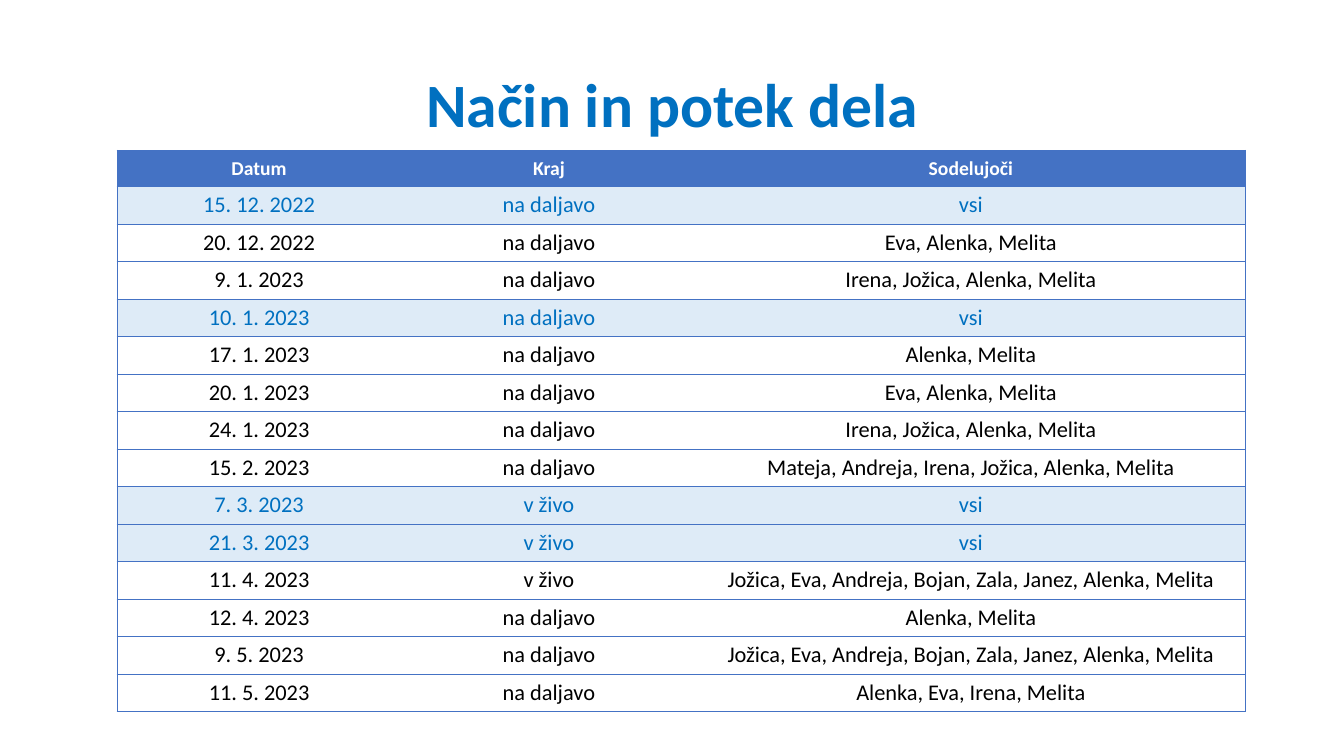
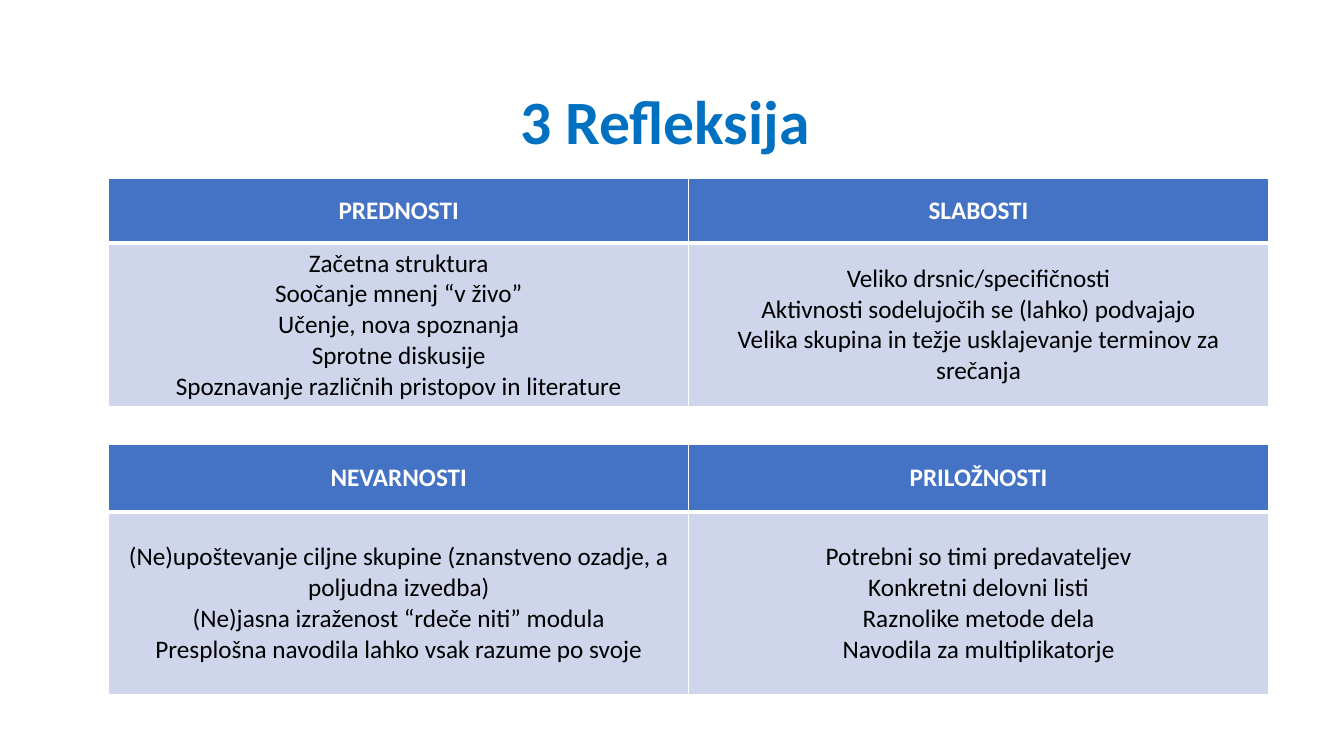
from lxml import etree
from pptx import Presentation
from pptx.dml.color import RGBColor
from pptx.enum.text import MSO_ANCHOR, MSO_AUTO_SIZE, PP_ALIGN
from pptx.oxml.ns import qn
from pptx.util import Inches, Pt

FONT = "Calibri"
TITLE_BLUE = RGBColor(0x00, 0x70, 0xC0)
HEADER_BLUE = RGBColor(0x44, 0x72, 0xC4)
PALE_BLUE = RGBColor(0xDE, 0xEB, 0xF7)
BODY_FILL = RGBColor(0xCF, 0xD5, 0xEA)
WHITE = RGBColor(0xFF, 0xFF, 0xFF)
BLACK = RGBColor(0x00, 0x00, 0x00)

TITLE_ONLY = 5
EVERYONE = "vsi"

MEETINGS = [
    ("15. 12. 2022", "na daljavo", EVERYONE),
    ("20. 12. 2022", "na daljavo", "Eva, Alenka, Melita"),
    ("9. 1. 2023", "na daljavo", "Irena, Jožica, Alenka, Melita"),
    ("10. 1. 2023", "na daljavo", EVERYONE),
    ("17. 1. 2023", "na daljavo", "Alenka, Melita"),
    ("20. 1. 2023", "na daljavo", "Eva, Alenka, Melita"),
    ("24. 1. 2023", "na daljavo", "Irena, Jožica, Alenka, Melita"),
    ("15. 2. 2023", "na daljavo", "Mateja, Andreja, Irena, Jožica, Alenka, Melita"),
    ("7. 3. 2023", "v živo", EVERYONE),
    ("21. 3. 2023", "v živo", EVERYONE),
    ("11. 4. 2023", "v živo", "Jožica, Eva, Andreja, Bojan, Zala, Janez, Alenka, Melita"),
    ("12. 4. 2023", "na daljavo", "Alenka, Melita"),
    ("9. 5. 2023", "na daljavo", "Jožica, Eva, Andreja, Bojan, Zala, Janez, Alenka, Melita"),
    ("11. 5. 2023", "na daljavo", "Alenka, Eva, Irena, Melita"),
]

STRENGTHS = """Začetna struktura
Soočanje mnenj “v živo”
Učenje, nova spoznanja
Sprotne diskusije
Spoznavanje različnih pristopov in literature"""
WEAKNESSES = """Veliko drsnic/specifičnosti
Aktivnosti sodelujočih se (lahko) podvajajo
Velika skupina in težje usklajevanje terminov za srečanja"""
THREATS = """(Ne)upoštevanje ciljne skupine (znanstveno ozadje, a poljudna izvedba)
(Ne)jasna izraženost “rdeče niti” modula
Presplošna navodila lahko vsak razume po svoje"""
OPPORTUNITIES = """Potrebni so timi predavateljev
Konkretni delovni listi
Raznolike metode dela
Navodila za multiplikatorje"""


def add_titled_slide(prs, title, left, top, width, height, align):
    s = prs.slides.add_slide(prs.slide_layouts[TITLE_ONLY])
    sp = s.shapes.title
    sp.left, sp.top, sp.width, sp.height = map(Inches, (left, top, width, height))
    tf = sp.text_frame
    tf.text = title
    tf.auto_size = MSO_AUTO_SIZE.NONE
    tf.vertical_anchor = MSO_ANCHOR.MIDDLE
    p = tf.paragraphs[0]
    p.alignment = align
    p.line_spacing = 0.9
    style_font(p.font, 44, TITLE_BLUE, True)
    return s


def style_font(font, size, color, bold):
    font.name, font.size, font.bold = FONT, Pt(size), bold
    font.color.rgb = color


def set_borders(cell, color, **widths):
    """Draw the sides L, R, T, B with the given point widths; others stay empty."""
    tc_pr = cell._tc.get_or_add_tcPr()
    for side in "LRTB":
        width = widths.get(side, 0)
        ln = etree.SubElement(tc_pr, qn(f"a:ln{side}"), w=str(Pt(width)))
        if width:
            fill = etree.SubElement(ln, qn("a:solidFill"))
            etree.SubElement(fill, qn("a:srgbClr"), val=str(color))
        else:
            etree.SubElement(ln, qn("a:noFill"))


def fill_cell(cell, text, size, color, bold, fill=None):
    """Write centred text, one paragraph a line, on a fill or on none."""
    cell.text = text
    cell.vertical_anchor = MSO_ANCHOR.MIDDLE
    for p in cell.text_frame.paragraphs:
        p.alignment = PP_ALIGN.CENTER
        style_font(p.font, size, color, bold)
    if fill is None:
        cell.fill.background()
    else:
        cell.fill.solid()
        cell.fill.fore_color.rgb = fill


def add_plain_table(s, left, top, col_widths, row_heights):
    table = s.shapes.add_table(
        len(row_heights), len(col_widths), Inches(left), Inches(top),
        Inches(sum(col_widths)), Inches(sum(row_heights))).table
    table.first_row = table.horz_banding = False
    for column, width in zip(table.columns, col_widths):
        column.width = Inches(width)
    for row, height in zip(table.rows, row_heights):
        row.height = Inches(height)
    return table


def add_meeting_table(s, left, top):
    rows = [("Datum", "Kraj", "Sodelujoči")] + MEETINGS
    table = add_plain_table(s, left, top, (2.82, 2.93, 5.44),
                            [0.36] + [0.37] * len(MEETINGS))
    for i, row in enumerate(rows):
        if i == 0:
            style = (14, WHITE, True, HEADER_BLUE)
        elif row[-1] == EVERYONE:
            style = (16, TITLE_BLUE, False, PALE_BLUE)
        else:
            style = (16, BLACK, False)
        for j, text in enumerate(row):
            cell = table.cell(i, j)
            set_borders(cell, HEADER_BLUE, T=0.5, B=0.5,
                        L=0.5 * (j == 0), R=0.5 * (j == len(row) - 1))
            fill_cell(cell, text, *style)


def add_swot_table(s, left, top, row_heights, headings, bodies):
    table = add_plain_table(s, left, top, (5.75, 5.75), row_heights)
    for j, (heading, body) in enumerate(zip(headings, bodies)):
        head_cell, body_cell = table.cell(0, j), table.cell(1, j)
        set_borders(head_cell, WHITE, L=1, R=1, T=1, B=3)
        set_borders(body_cell, WHITE, L=1, R=1, T=3, B=1)
        fill_cell(head_cell, heading, 18, WHITE, True, HEADER_BLUE)
        fill_cell(body_cell, body, 18, BLACK, False, BODY_FILL)


def build_schedule_slide(prs):
    s = add_titled_slide(prs, "Način in potek dela", 0.92, 0.66, 11.5, 0.82,
                         PP_ALIGN.CENTER)
    add_meeting_table(s, 1.16, 1.49)


def build_reflection_slide(prs):
    s = add_titled_slide(prs, "3 Refleksija", 5.06, 0.67, 3.55, 1.13, PP_ALIGN.LEFT)
    add_swot_table(s, 1.08, 1.77, (0.64, 1.62), ("PREDNOSTI", "SLABOSTI"),
                   (STRENGTHS, WEAKNESSES))
    add_swot_table(s, 1.08, 4.41, (0.67, 1.81), ("NEVARNOSTI", "PRILOŽNOSTI"),
                   (THREATS, OPPORTUNITIES))


def main():
    prs = Presentation()
    prs.slide_width, prs.slide_height = Inches(13.33), Inches(7.5)
    build_schedule_slide(prs)
    build_reflection_slide(prs)
    prs.save("out.pptx")


if __name__ == "__main__":
    main()
